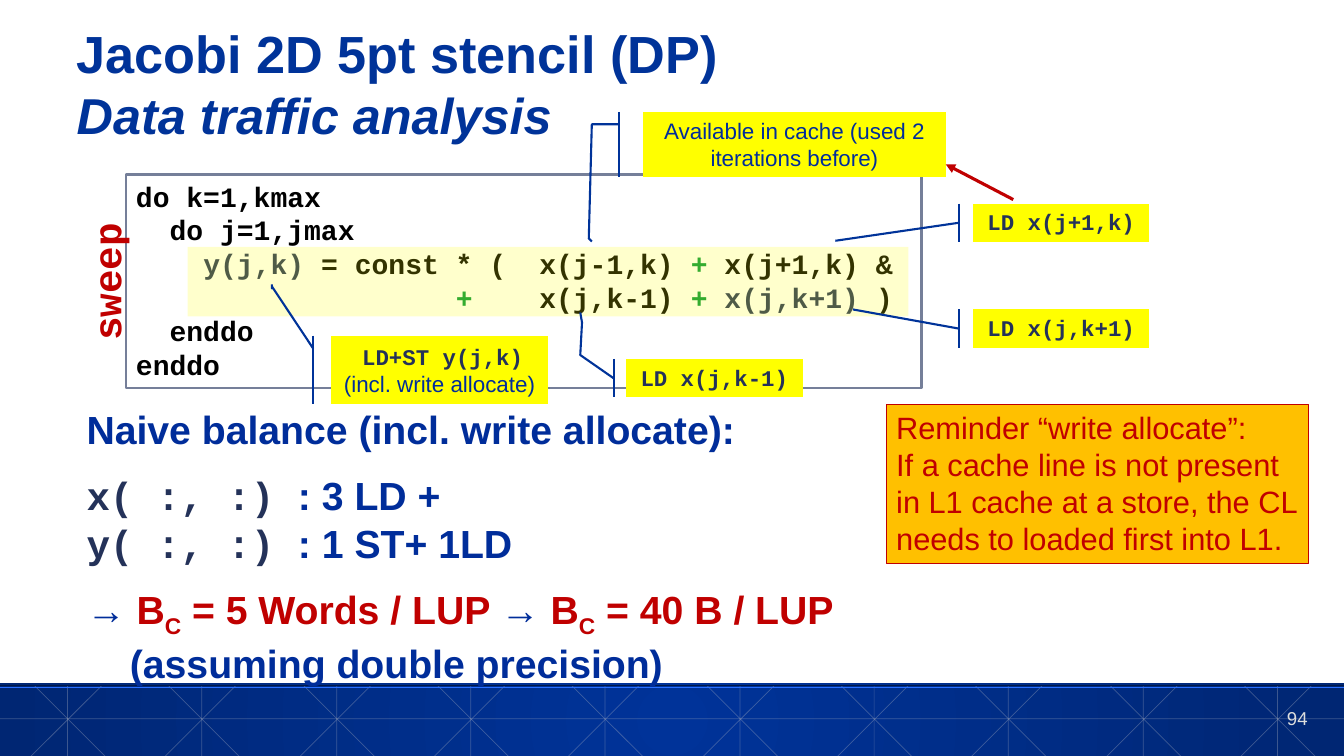
from dataclasses import dataclass

from lxml import etree
from pptx import Presentation
from pptx.dml.color import RGBColor
from pptx.enum.shapes import MSO_CONNECTOR, MSO_SHAPE
from pptx.enum.text import MSO_ANCHOR, PP_ALIGN
from pptx.oxml.ns import qn
from pptx.util import Pt

PX = 9144
RECT = MSO_SHAPE.RECTANGLE
CALLOUT_1 = MSO_SHAPE.LINE_CALLOUT_1_ACCENT_BAR
CALLOUT_3 = MSO_SHAPE.LINE_CALLOUT_3_ACCENT_BAR
STRAIGHT = MSO_CONNECTOR.STRAIGHT
TOP, MIDDLE, BOTTOM = MSO_ANCHOR.TOP, MSO_ANCHOR.MIDDLE, MSO_ANCHOR.BOTTOM
LEFT, CENTER, RIGHT = PP_ALIGN.LEFT, PP_ALIGN.CENTER, PP_ALIGN.RIGHT


@dataclass(frozen=True)
class Theme:
    """Colours, fonts and type sizes of the slide."""
    blue: str = "003399"
    navy: str = "002673"
    body: str = "002D9A"
    note: str = "012D9A"
    ink: str = "243259"
    slate: str = "757F99"
    red: str = "C00000"
    green: str = "02983B"
    black: str = "000000"
    yellow: str = "FFFF00"
    amber: str = "FFC000"
    mesh: str = "ACB2C2"
    rule_dark: str = "00194C"
    rule_light: str = "2970FF"
    number: str = "DDDEDD"
    sans: str = "Arial"
    mono: str = "Courier New"
    title: float = 37.3
    subtitle: float = 36
    large: float = 28
    reminder: float = 22
    code: float = 20
    label: float = 16
    page: float = 13.3


T = Theme()
LABEL = {"name": T.mono, "size": T.label, "bold": True, "color": T.ink}
NOTE = {"name": T.sans, "size": T.label, "bold": False, "color": T.note}
CODE = {"name": T.mono, "size": T.code, "bold": True, "color": T.black}
BODY = {"name": T.sans, "size": T.large, "bold": True, "color": T.body}


def add_run(p, text, style):
    """Add one run formatted from a style dict."""
    r = p.add_run()
    r.text = text
    values = dict(style)
    r.font.color.rgb = RGBColor.from_string(values.pop("color"))
    baseline = values.pop("baseline", None)
    if baseline:
        r.font._element.set("baseline", str(baseline))
    values["size"] = Pt(values["size"])
    for key, value in values.items():
        setattr(r.font, key, value)


def write(s, paragraphs, style, align=LEFT, anchor=TOP, inset=None, wrap=True, tab=None):
    """Fill a shape with paragraphs of (text, overrides) runs."""
    tf = s.text_frame
    frame = {"word_wrap": wrap, "vertical_anchor": anchor}
    if inset is not None:
        sides = ("left", "top", "right", "bottom")
        frame.update({f"margin_{side}": inset * PX for side in sides})
    for key, value in frame.items():
        setattr(tf, key, value)
    for i, runs in enumerate(paragraphs):
        p = tf.paragraphs[0] if i == 0 else tf.add_paragraph()
        p.alignment = align
        if tab:
            stops = etree.SubElement(p._p.get_or_add_pPr(), qn("a:tabLst"))
            etree.SubElement(stops, qn("a:tab"), pos=str(tab * PX), algn="l")
        for text, override in runs:
            for k, part in enumerate(text.split("\n")):
                if k:
                    p.add_line_break()
                if part:
                    add_run(p, part, {**style, **override})
    return tf


def set_alpha(element, percent):
    """Make the colours under an element partly transparent."""
    for colour in element.iter(qn("a:srgbClr")):
        etree.SubElement(colour, qn("a:alpha")).set("val", str(percent * 1000))


def add_box(slide, box, fill=None, line=None, width=1.5, kind=RECT):
    """Add a flat preset shape."""
    s = slide.shapes.add_shape(kind, *(v * PX for v in box))
    s.shadow.inherit = False
    if fill:
        s.fill.solid()
        s.fill.fore_color.rgb = RGBColor.from_string(fill)
    else:
        s.fill.background()
    if line:
        s.line.color.rgb = RGBColor.from_string(line)
        s.line.width = Pt(width)
    else:
        s.line.fill.background()
    return s


def add_callout(slide, box, kind, points, paragraphs, style=LABEL, anchor=TOP):
    """Add a yellow accent callout with its leader line."""
    s = add_box(slide, box, T.yellow, T.blue, kind=kind)
    for i, value in enumerate(points):
        s.adjustments[i] = value
    write(s, paragraphs, style, CENTER, anchor)


def add_text(slide, box, paragraphs, style, **options):
    """Add a text box and return its text frame and shape."""
    s = slide.shapes.add_textbox(*(v * PX for v in box))
    return write(s, paragraphs, style, **options), s


def add_line(slide, points, colour, width, alpha=None, head=False):
    """Add a straight line, optionally transparent or with an arrowhead."""
    s = slide.shapes.add_connector(STRAIGHT, *(v * PX for v in points))
    s.line.color.rgb = RGBColor.from_string(colour)
    s.line.width = Pt(width)
    sp = s._element.spPr
    ln = sp.find(qn("a:ln"))
    if alpha:
        set_alpha(ln, alpha)
    if head:
        etree.SubElement(ln, qn("a:headEnd")).set("type", "triangle")
    etree.SubElement(sp, qn("a:effectLst"))


def add_footer(slide):
    """Draw the blue footer band, its mesh and the page number."""
    s = add_box(slide, (0, 678, 1334, 73), T.blue)
    s.fill.gradient()
    for stop, colour, place in zip(s.fill.gradient_stops, (T.blue, T.navy), (0, 1)):
        stop.color.rgb = RGBColor.from_string(colour)
        stop.position = place
    grad = s._element.spPr.find(qn("a:gradFill"))
    grad.remove(grad.find(qn("a:lin")))
    circle = etree.SubElement(grad, qn("a:path"))
    circle.set("path", "circle")
    centre = etree.SubElement(circle, qn("a:fillToRect"))
    for side in "ltrb":
        centre.set(side, "50000")
    mesh = [(0, 713, 1333, 713)]
    for i in range(10):
        x = round(67 + i * 400 / 3)
        mesh += [(x, 680, x, 751), (x - 33, 680, x + 38, 751), (x - 37, 751, x + 34, 680)]
    for points in mesh:
        add_line(slide, points, T.mesh, 0.5, alpha=35)
    add_line(slide, (0, 680, 1333, 680), T.rule_dark, 1.25)
    add_line(slide, (0, 682, 1333, 682), T.rule_light, 1)
    add_text(slide, (1260, 701, 37, 22), [[("94", {})]],
             {"name": T.sans, "size": T.page, "color": T.number},
             align=RIGHT, anchor=BOTTOM, inset=0, wrap=False)


def add_code(slide):
    """Draw the loop nest with its highlighted statement."""
    ink, green = {"color": T.ink}, {"color": T.green}
    s = add_box(slide, (125, 173, 789, 212), line=T.slate, width=2)
    write(s, [
        [("do k=1,kmax", {})],
        [("  do j=1,jmax", {})],
        [("    ", {}), ("y(j,k)", ink), (" = const * (\tx(j-1,k) ", {}),
         ("+ ", green), ("x(j+1,k) &", {})],
        [("                   ", {}), ("+\t", green), ("x(j,k-1) ", {}),
         ("+ ", green), ("x(j,k+1) ", ink), (")", {})],
        [("  enddo", {})],
        [("enddo", {})]], CODE, tab=400)
    _, s = add_text(slide, (-1, 251, 212, 57), [[("sweep", {})]],
                    {**CODE, "size": T.large, "color": T.red}, align=CENTER)
    s.rotation = 270
    s = add_box(slide, (186, 245, 715, 69), T.yellow)
    set_alpha(s._element.spPr, 20)


def add_callouts(slide):
    """Label each memory access of the statement."""
    add_callout(slide, (328, 333, 216, 68), CALLOUT_3,
                (0.19, -0.08, -0.72, -0.27, -0.69, -0.27, -0.75, -0.27),
                [[(" ", {"name": T.sans, "color": T.slate}), ("LD+ST y(j,k)\n", {}),
                  ("(incl. write allocate)", NOTE)]], anchor=MIDDLE)
    add_callout(slide, (638, 111, 300, 65), CALLOUT_3,
                (0.19, -0.08, 0.19, -0.17, 1.93, -0.18, 1.98, -0.17),
                [[("Available in cache (used 2 iterations before)", {})]], NOTE)
    add_line(slide, (938, 163, 1005, 198), T.red, 2.25, head=True)
    for x, y, kind, points, text in (
            (965, 202, CALLOUT_1, (0.5, -0.08, 0.97, -0.78), "LD x(j+1,k)"),
            (965, 307, CALLOUT_1, (0.5, -0.08, 0, -0.68), "LD x(j,k+1)"),
            (621, 356, CALLOUT_3, (0.51, -0.07, -0.1, -0.26, -0.95, -0.25, -1.21, -0.26),
             "LD x(j,k-1)")):
        add_callout(slide, (x, y, 175, 38), kind, points, [[(text, {})]])


def add_balance(slide):
    """Write the code balance and the write-allocate reminder."""
    mono, red = {"name": T.mono, "color": T.ink}, {"color": T.red}
    sub = {**red, "baseline": -25000}
    tf, _ = add_text(slide, (76, 397, 838, 293), [
        [("Naive balance (incl. write allocate):", {})],
        [("x( :, :) ", mono), (": 3 LD +\n", {}), ("y( :, :) ", mono), (": 1 ST+ 1LD", {})],
        [("→ ", {}), ("B", red), ("C", sub), (" = 5 Words / LUP ", red),
         ("→", {}), (" B", red), ("C", sub), (" = 40 B / LUP", red)],
        [("(assuming double precision)", {})]], BODY)
    for p in tf.paragraphs[1:3]:
        p.space_before = Pt(T.large / 2)
    tf.paragraphs[3]._p.get_or_add_pPr().set("marL", str(43 * PX))
    s = add_box(slide, (879, 401, 419, 158), T.amber, T.red, 0.75)
    write(s, [[("Reminder “write allocate”:", {})],
              [("If a cache line is not present in L1 cache at a store, "
                "the CL needs to loaded first into L1.", {})]],
          {"name": T.sans, "size": T.reminder, "color": T.red})


def main():
    """Build the slide and save it."""
    prs = Presentation()
    prs.slide_width, prs.slide_height = 1333 * PX, 750 * PX
    slide = prs.slides.add_slide(prs.slide_layouts[6])
    add_footer(slide)
    add_text(slide, (76, 21, 1181, 131),
             [[("Jacobi 2D 5pt stencil (DP)\n", {}),
               ("Data traffic analysis", {"size": T.subtitle, "italic": True})]],
             {"name": T.sans, "size": T.title, "bold": True, "color": T.blue}, inset=0)
    add_code(slide)
    add_callouts(slide)
    add_balance(slide)
    prs.save("out.pptx")


if __name__ == "__main__":
    main()
